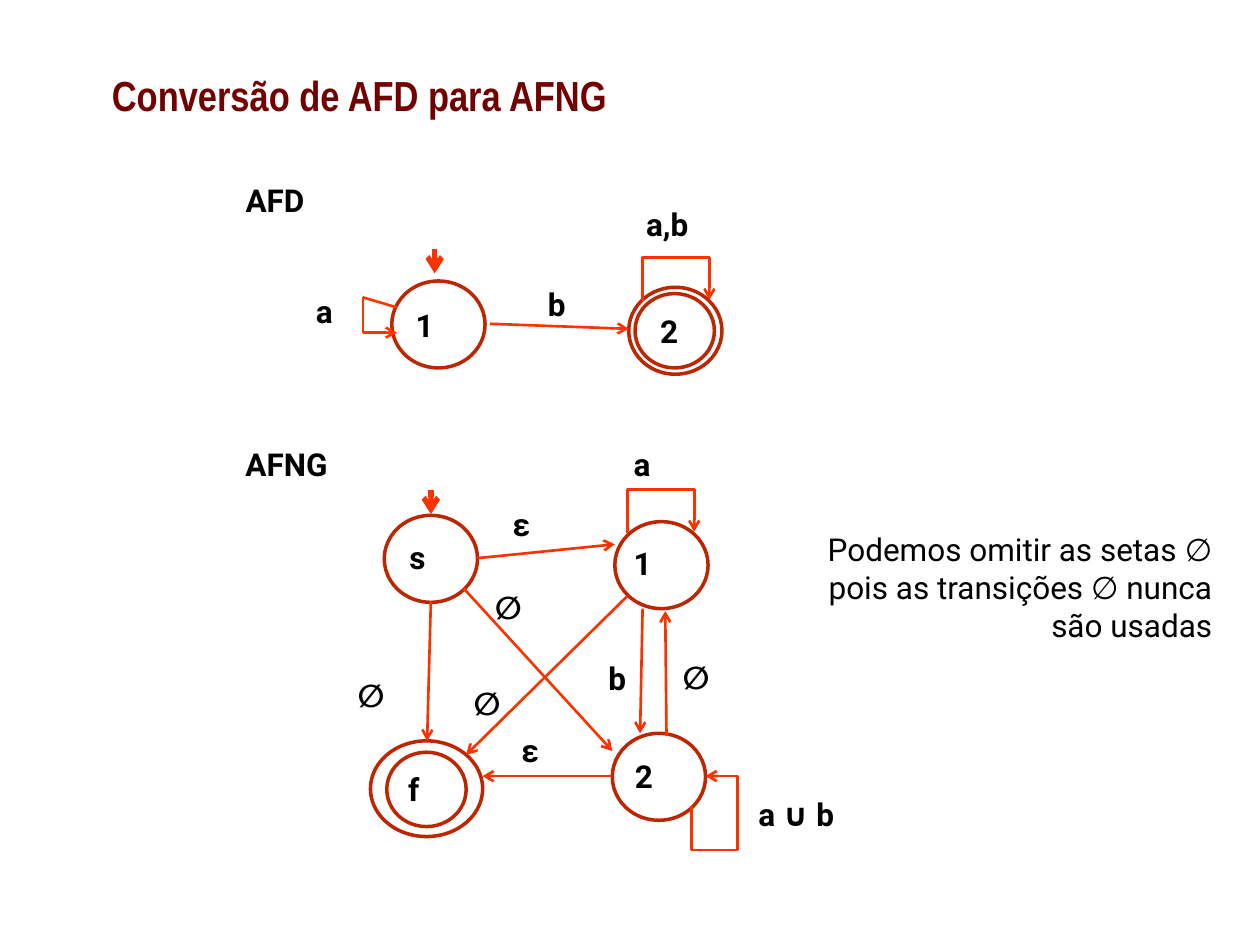
from itertools import pairwise

from lxml import etree
from pptx import Presentation
from pptx import util as u
from pptx.dml.color import RGBColor
from pptx.enum import shapes, text
from pptx.oxml.ns import qn

COLORS = {"title": "720000", "text": "000000", "state": "BD2600",
          "arrow": "F93200", "afd_arrow": "FF3300", "paper": "FFFFFF"}
SLIDE_W, SLIDE_H = u.Inches(10), u.Inches(7.5)
COLUMNS, ROWS = 100, 75
STATE_W, STATE_H = 7.4, 6.9
INNER_W, INNER_H = 6.3, 5.9
LABEL_H = 4


def col(n):
    return round(SLIDE_W * n / COLUMNS)


def row(n):
    return round(SLIDE_H * n / ROWS)


def color(name):
    return RGBColor.from_string(COLORS[name])


def add_text(slide, words, left, top, width=6.6, height=LABEL_H, *, size=18,
             font="Roboto", ink="text", bold=True, align=text.PP_ALIGN.LEFT,
             anchor=text.MSO_ANCHOR.TOP, fit=text.MSO_AUTO_SIZE.SHAPE_TO_FIT_TEXT):
    box = slide.shapes.add_textbox(col(left), row(top), col(width), row(height))
    frame = box.text_frame
    frame.word_wrap = True
    frame.auto_size = fit
    frame.vertical_anchor = anchor
    paragraph = frame.paragraphs[0]
    paragraph.alignment = align
    run = paragraph.add_run()
    run.text = words
    run.font.name, run.font.size, run.font.bold = font, u.Pt(size), bold
    run.font.color.rgb = color(ink)


def add_state(slide, left, top, width=STATE_W, height=STATE_H, filled=True):
    state = slide.shapes.add_shape(shapes.MSO_SHAPE.OVAL, col(left), row(top),
                                   col(width), row(height))
    state.shadow.inherit = False
    if filled:
        state.fill.solid()
        state.fill.fore_color.rgb = color("paper")
    else:
        state.fill.background()
    state.line.color.rgb = color("state")
    state.line.width = u.Pt(2)


def add_line(slide, start, end, ink="arrow", weight=1.5, arrow=True,
             kind=shapes.MSO_CONNECTOR.STRAIGHT):
    line = slide.shapes.add_connector(kind, col(start[0]), row(start[1]),
                                      col(end[0]), row(end[1]))
    line.line.color.rgb = color(ink)
    line.line.width = u.Pt(weight)
    if arrow:
        etree.SubElement(line.line._get_or_add_ln(), qn("a:tailEnd"), type="arrow")
    etree.SubElement(line._element.spPr, qn("a:effectLst"))
    return line


def add_loop(slide, start, end, preset, *adjustments):
    """Bent arrow that leaves start vertically; a quarter turn and two flips aim it.

    Adjustments are shares of the rise and of the run from start to end.
    """
    run, rise = end[0] - start[0], start[1] - end[1]
    loop = add_line(slide, start, end, kind=shapes.MSO_CONNECTOR.ELBOW)
    loop.left = col((start[0] + end[0] - rise) / 2)
    loop.top = row((start[1] + end[1] - run) / 2)
    loop.width, loop.height = col(rise), row(run)
    frame = loop._element.spPr.find(qn("a:xfrm"))
    for name, value in (("rot", "5400000"), ("flipH", "1"), ("flipV", "1")):
        frame.set(name, value)
    geometry = loop._element.spPr.find(qn("a:prstGeom"))
    geometry.set("prst", preset)
    guides = geometry.get_or_add_avLst()
    for number, share in enumerate(adjustments, 1):
        etree.SubElement(guides, qn("a:gd"), name=f"adj{number}",
                         fmla=f"val {round(share * 100000)}")


def add_top_loop(slide, left, foot):
    """Loop over a state, three and a half rows high."""
    add_loop(slide, (left, foot), (left + 5.3, foot - 0.1), "bentConnector3", 35)


def add_start_arrow(slide, x, top):
    add_line(slide, (x, top), (x, top + 1.9), weight=3)


def draw_afd(slide):
    add_text(slide, "AFD", 18.5, 13.9, 7.9)
    add_state(slide, 31.1, 22.3)
    add_state(slide, 49.9, 22.8)
    add_state(slide, 50.4, 23.3, INNER_W, INNER_H, filled=False)
    add_start_arrow(slide, 34.5, 19.8)
    add_line(slide, (38.9, 25.7), (49.9, 26.1), "afd_arrow")
    loop_corners = [(31.5, 24.4), (28.8, 23.6), (28.8, 26.4), (31.5, 26.4)]
    for start, end in pairwise(loop_corners):
        add_line(slide, start, end, "afd_arrow", arrow=end == loop_corners[-1])
    add_top_loop(slide, 51, 23.9)
    for label, left, top in [("1", 32, 23.8), ("2", 51.4, 24.3), ("a", 24.1, 22.7),
                             ("b", 42.5, 22.1), ("a,b", 50.3, 15.8)]:
        add_text(slide, label, left, top)


def draw_afng(slide):
    add_text(slide, "AFNG", 18.5, 34.8, 10.3)
    for left, top in [(48.6, 58.2), (48.8, 41.4), (30.5, 40.9)]:
        add_state(slide, left, top)
    add_state(slide, 30.7, 59.7, INNER_W, INNER_H, filled=False)
    add_state(slide, 29.4, 58.8, 8.9, 7.6, filled=False)
    add_start_arrow(slide, 34.2, 38.9)
    transitions = [
        ((37.9, 44.3), (48.8, 43.2)),  # s to 1
        ((36.8, 46.7), (48.6, 59.6)),  # s to 2
        ((34.2, 47.7), (33.9, 58.8)),  # s to f
        ((49.8, 47.3), (37, 59.9)),    # 1 to f
        ((51, 48.3), (50.8, 58.2)),    # 1 to 2
        ((52.9, 58.4), (52.8, 48.5)),  # 2 to 1
        ((48.6, 61.6), (38.3, 61.6)),  # 2 to f
    ]
    for start, end in transitions:
        add_line(slide, start, end)
    add_top_loop(slide, 49.8, 42.3)
    add_loop(slide, (54.9, 64), (56, 61.6), "bentConnector4", -1.44, 3.3)
    for label, left, top in [("s", 31.5, 42.2), ("1", 49.3, 42.7), ("2", 49.4, 59.6),
                             ("f", 31.4, 60.6), ("a", 49.3, 34.8)]:
        add_text(slide, label, left, top)
    for label, left, top in [("ε", 39.7, 39.6), ("ε", 40.4, 57.5), ("b", 47.3, 51.8),
                             ("∅", 53.2, 51.7), ("∅", 27.4, 53.2),
                             ("∅", 38.3, 46.2), ("∅", 36.6, 53.8)]:
        add_text(slide, label, left, top, 5.2)
    add_text(slide, "a ∪ b", 59.2, 62.6, 8.7)


def main():
    deck = Presentation()
    deck.slide_width, deck.slide_height = SLIDE_W, SLIDE_H
    slide = deck.slides.add_slide(deck.slide_layouts[6])
    add_text(slide, "Conversão de AFD para AFNG", 7.9, 1.3, 79.7, 12.5, size=24,
             font="Arial Narrow", ink="title", anchor=text.MSO_ANCHOR.MIDDLE,
             fit=text.MSO_AUTO_SIZE.NONE)
    draw_afd(slide)
    draw_afng(slide)
    add_text(slide, "Podemos omitir as setas ∅ pois as transições ∅ nunca são usadas",
             63.5, 41.6, 33.7, 10.1, bold=False, align=text.PP_ALIGN.RIGHT)
    deck.save("out.pptx")


if __name__ == "__main__":
    main()
